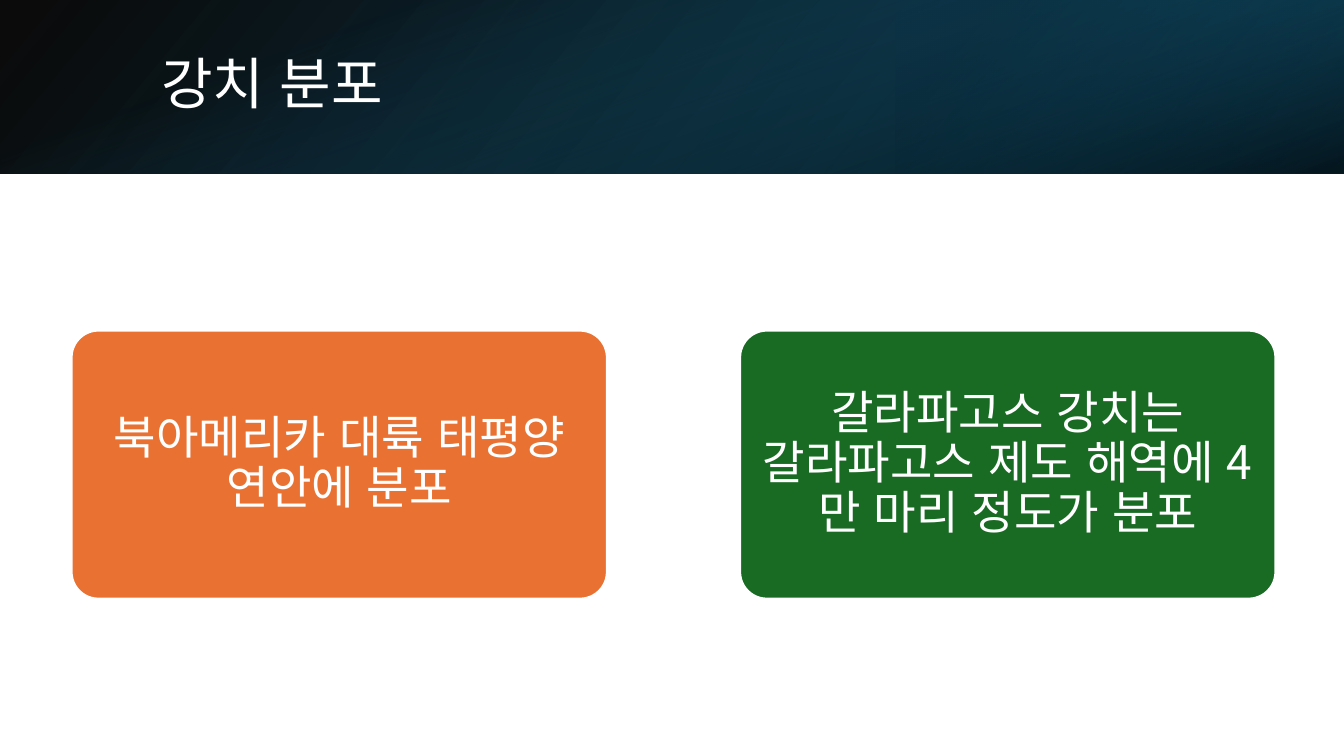
from lxml import etree
from pptx import Presentation
from pptx.dml.color import RGBColor
from pptx.enum.lang import MSO_LANGUAGE_ID as Language
from pptx.enum.shapes import MSO_SHAPE as Shape
from pptx.enum.text import MSO_ANCHOR as Anchor, MSO_AUTO_SIZE as AutoSize, PP_ALIGN as Align
from pptx.oxml.ns import qn
from pptx.util import Inches, Pt

BLACK = RGBColor(0x00, 0x00, 0x00)
WHITE = RGBColor(0xFF, 0xFF, 0xFF)
TEAL = RGBColor(0x15, 0x60, 0x82)
DEEP_TEAL = RGBColor(0x10, 0x48, 0x62)
DARK_TEAL = RGBColor(0x0B, 0x30, 0x41)
ORANGE = RGBColor(0xE9, 0x71, 0x32)
GREEN = RGBColor(0x19, 0x6B, 0x24)

FONT = "Noto Sans CJK KR"
WIDTH, HEIGHT = 13.33, 7.5
BAND_HEIGHT = 1.72
CARD_LEFT, CARD_TOP, CARD_WIDTH, CARD_HEIGHT = 0.71, 3.28, 5.31, 2.66
CARD_STEP = 6.63


def write_text(frame, text, size, color=WHITE, align=Align.LEFT, insets=(0.1, 0.05)):
    """Fill a text frame with one formatted paragraph."""
    frame.word_wrap = True
    frame.auto_size = AutoSize.NONE
    frame.vertical_anchor = Anchor.MIDDLE
    frame.margin_left = frame.margin_right = Inches(insets[0])
    frame.margin_top = frame.margin_bottom = Inches(insets[1])
    para = frame.paragraphs[0]
    para.alignment = align
    para.line_spacing = 0.9
    span = para.add_run()
    span.text = text
    span.font.name = FONT
    span.font.size = Pt(size)
    span.font.color.rgb = color
    span.font.language_id = Language.KOREAN
    east_asian = etree.SubElement(span.font._element, qn("a:ea"))
    east_asian.set("typeface", FONT)


class SlideBuilder:
    def __init__(self, page):
        self.page = page

    def add_box(self, kind, left, top, width, height):
        box = self.page.shapes.add_shape(
            kind, Inches(left), Inches(top), Inches(width), Inches(height))
        box.shadow.inherit = False
        return box

    def add_gradient(self, left, top, width, height, stops, angle, rotation=0, flip=False):
        """Add a borderless rectangle; stops are (position, colour, opacity) in percent."""
        box = self.add_box(Shape.RECTANGLE, left, top, width, height)
        box.line.fill.background()
        box.rotation = rotation
        properties = box.element.spPr
        if flip:
            properties.find(qn("a:xfrm")).set("flipH", "1")
        box.fill.gradient()
        box.fill.gradient_angle = 360 - angle
        stop_list = properties.find(qn("a:gradFill")).find(qn("a:gsLst"))
        for stop, (position, color, opacity) in zip(box.fill.gradient_stops, stops):
            stop.position = position / 100
            stop.color.rgb = color
        for node, (position, color, opacity) in zip(stop_list, stops):
            alpha = etree.SubElement(node[0], qn("a:alpha"))
            alpha.set("val", str(opacity * 1000))

    def add_title(self, text, left, top, width, height):
        title = self.page.shapes.title
        title.left, title.top = Inches(left), Inches(top)
        title.width, title.height = Inches(width), Inches(height)
        write_text(title.text_frame, text, 40)
        # Bring the title in front of the band
        self.page.shapes.element.append(title.element)

    def add_card(self, text, left, color):
        card = self.add_box(Shape.ROUNDED_RECTANGLE, left, CARD_TOP, CARD_WIDTH, CARD_HEIGHT)
        card.adjustments[0] = 0.1
        card.fill.solid()
        card.fill.fore_color.rgb = color
        card.line.color.rgb = WHITE
        card.line.width = Pt(1.5)
        write_text(card.text_frame, text, 33, align=Align.CENTER, insets=(0.07, 0.05))


def main():
    deck = Presentation()
    deck.slide_width, deck.slide_height = Inches(WIDTH), Inches(HEIGHT)
    builder = SlideBuilder(deck.slides.add_slide(deck.slide_layouts[5]))

    # Header band: three layered gradients, the last one turned on its side
    builder.add_gradient(0, 0, WIDTH, BAND_HEIGHT,
                         [(0, BLACK, 96), (100, DEEP_TEAL, 100)], 140, flip=True)
    builder.add_gradient(WIDTH * 2 / 3, 0, WIDTH / 3, BAND_HEIGHT,
                         [(19, DARK_TEAL, 68), (100, TEAL, 79)], 320, rotation=180, flip=True)
    offset = (WIDTH - BAND_HEIGHT) / 2
    builder.add_gradient(offset, -offset, BAND_HEIGHT, WIDTH,
                         [(23, TEAL, 0), (99, BLACK, 74)], 340, rotation=90)

    # Title
    builder.add_title("강치 분포", 1.5, 0.38, 10.98, 0.96)

    # Distribution cards
    cards = [
        ("북아메리카 대륙 태평양 연안에 분포", ORANGE),
        ("갈라파고스 강치는 갈라파고스 제도 해역에 4만 마리 정도가 분포", GREEN),
    ]
    for index, (text, color) in enumerate(cards):
        builder.add_card(text, CARD_LEFT + index * CARD_STEP, color)

    deck.save("out.pptx")


if __name__ == "__main__":
    main()
